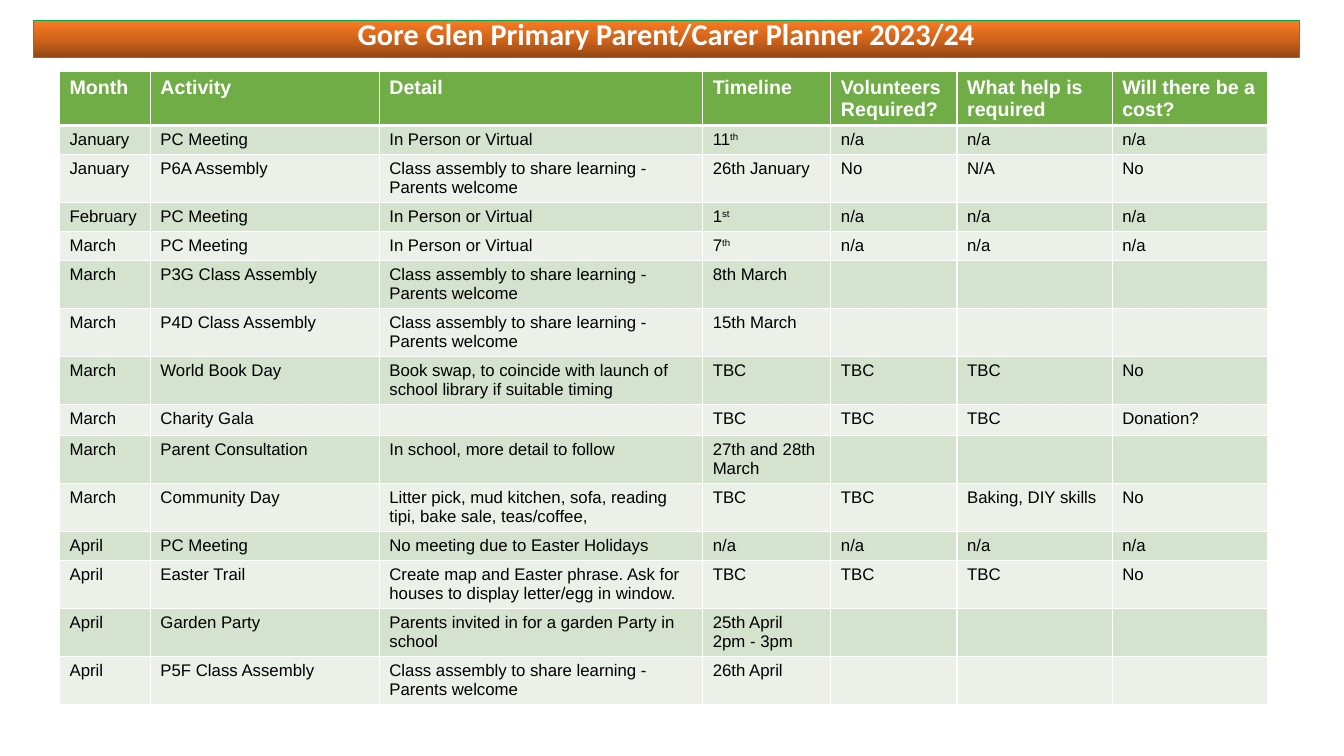
import copy

import lxml.etree
import pptx
import pptx.dml.color
import pptx.enum.text
import pptx.oxml.ns
import pptx.util

Cm = pptx.util.Cm
Pt = pptx.util.Pt

TITLE = "Gore Glen Primary Parent/Carer Planner 2023/24"
COLUMN_WIDTHS = [2.29, 5.77, 8.15, 3.23, 3.18, 3.91, 3.91]
HEADER_HEIGHT, SINGLE_HEIGHT, DOUBLE_HEIGHT = 1.36, 0.73, 1.21
HEADER_FILL = "70AD47"
BAND_FILLS = ["EBF1E8", "D4E2CE"]
TITLE_GRADIENT = [(0, "914613"), (0.5, "D1651C"), (1, "FB7A22")]

HEADINGS = ["Month", "Activity", "Detail", "Timeline", "Volunteers Required?",
            "What help is required", "Will there be a cost?"]
MEETING = "In Person or Virtual"
ASSEMBLY = "Class assembly to share learning - Parents welcome"
NOT_NEEDED = ["n/a"] * 3
UNDECIDED = ["TBC"] * 3
BLANK = [""] * 3
EVENTS = [
    (SINGLE_HEIGHT, ["January", "PC Meeting", MEETING, "11^th", *NOT_NEEDED]),
    (DOUBLE_HEIGHT, ["January", "P6A Assembly", ASSEMBLY, "26th January", "No", "N/A", "No"]),
    (SINGLE_HEIGHT, ["February", "PC Meeting", MEETING, "1^st", *NOT_NEEDED]),
    (SINGLE_HEIGHT, ["March", "PC Meeting", MEETING, "7^th", *NOT_NEEDED]),
    (DOUBLE_HEIGHT, ["March", "P3G Class Assembly", ASSEMBLY, "8th March", *BLANK]),
    (DOUBLE_HEIGHT, ["March", "P4D Class Assembly", ASSEMBLY, "15th March", *BLANK]),
    (DOUBLE_HEIGHT, ["March", "World Book Day",
                     "Book swap, to coincide with launch of school library if suitable timing",
                     *UNDECIDED, "No"]),
    (SINGLE_HEIGHT, ["March", "Charity Gala", "", *UNDECIDED, "Donation?"]),
    (DOUBLE_HEIGHT, ["March", "Parent Consultation", "In school, more detail to follow",
                     "27th and 28th March", *BLANK]),
    (DOUBLE_HEIGHT, ["March", "Community Day",
                     "Litter pick, mud kitchen, sofa, reading tipi, bake sale, teas/coffee,",
                     "TBC", "TBC", "Baking, DIY skills", "No"]),
    (SINGLE_HEIGHT, ["April", "PC Meeting", "No meeting due to Easter Holidays",
                     "n/a", *NOT_NEEDED]),
    (DOUBLE_HEIGHT, ["April", "Easter Trail",
                     "Create map and Easter phrase. Ask for houses to display letter/egg in window.",
                     *UNDECIDED, "No"]),
    (DOUBLE_HEIGHT, ["April", "Garden Party", "Parents invited in for a garden Party in school",
                     "25th April\n2pm - 3pm", *BLANK]),
    (DOUBLE_HEIGHT, ["April", "P5F Class Assembly", ASSEMBLY, "26th April", *BLANK]),
]

TITLE_FONT = {"name": "Calibri", "size": Pt(21.6), "bold": True}
HEADER_FONT = {"name": "Arial", "size": Pt(14), "bold": True}
BODY_FONT = {"name": "Arial", "size": Pt(12), "bold": False}


def colour(value):
    """Turn a hex string into a colour."""
    return pptx.dml.color.RGBColor.from_string(value)


def apply(target, values):
    """Set each named attribute on the target."""
    for name, value in values.items():
        setattr(target, name, value)


def add_span(para, text, font, hex_colour):
    """Add a formatted run to a paragraph."""
    span = para.add_run()
    span.text = text
    apply(span.font, font)
    span.font.color.rgb = colour(hex_colour)
    return span


def fill_gradient(shape, stops, angle):
    """Give a shape a linear gradient through three stops."""
    shape.fill.gradient()
    shape.fill.gradient_angle = angle
    first = shape.fill.gradient_stops[0]._gs
    first.addnext(copy.deepcopy(first))
    for stop, (position, value) in zip(shape.fill.gradient_stops, stops):
        stop.position = position
        stop.color.rgb = colour(value)


def format_title(title):
    """Place the title placeholder as a gradient banner."""
    apply(title, {"left": Cm(0.84), "top": Cm(0.51), "width": Cm(31.9), "height": Cm(0.94)})
    fill_gradient(title, TITLE_GRADIENT, 90)
    title.line.color.rgb = colour("00B050")
    title.line.width = Pt(0.75)
    frame = title.text_frame
    apply(frame, {"word_wrap": True,
                  "auto_size": pptx.enum.text.MSO_AUTO_SIZE.NONE,
                  "vertical_anchor": pptx.enum.text.MSO_ANCHOR.BOTTOM})
    para = frame.paragraphs[0]
    apply(para, {"alignment": pptx.enum.text.PP_ALIGN.CENTER, "line_spacing": 0.9})
    add_span(para, TITLE, TITLE_FONT, "FFFFFF")


def add_borders(cell, top, bottom):
    """Draw white borders around a cell, with widths in points."""
    properties = cell._tc.get_or_add_tcPr()
    for side, width in {"L": 1, "R": 1, "T": top, "B": bottom}.items():
        line = lxml.etree.SubElement(properties, pptx.oxml.ns.qn(f"a:ln{side}"), w=str(Pt(width)))
        solid = lxml.etree.SubElement(line, pptx.oxml.ns.qn("a:solidFill"))
        lxml.etree.SubElement(solid, pptx.oxml.ns.qn("a:srgbClr"), val="FFFFFF")


def write_cell(cell, text, font, hex_colour):
    """Write lines of text, raising whatever follows a caret."""
    frame = cell.text_frame
    for number, line in enumerate(text.split("\n")):
        para = frame.add_paragraph() if number else frame.paragraphs[0]
        base, _, raised = line.partition("^")
        if base:
            add_span(para, base, font, hex_colour)
        else:
            lxml.etree.SubElement(para._p, pptx.oxml.ns.qn("a:endParaRPr"),
                                  sz=str(int(font["size"].pt * 100)))
        if raised:
            span = add_span(para, raised, font, hex_colour)
            span._r.get_or_add_rPr().set("baseline", "30000")


def add_planner(page):
    """Add the table of events under its headings."""
    rows = [(HEADER_HEIGHT, HEADINGS), *EVENTS]
    frame = page.shapes.add_table(len(rows), len(HEADINGS), Cm(1.5), Cm(1.8),
                                  Cm(sum(COLUMN_WIDTHS)), Cm(sum(row[0] for row in rows)))
    table = frame.table
    for column, width in zip(table.columns, COLUMN_WIDTHS):
        column.width = Cm(width)
    for number, (height, texts) in enumerate(rows):
        table.rows[number].height = Cm(height)
        header = number == 0
        for cell, text in zip(table.rows[number].cells, texts):
            add_borders(cell, 3 if number == 1 else 1, 3 if header else 1)
            cell.fill.solid()
            cell.fill.fore_color.rgb = colour(HEADER_FILL if header else BAND_FILLS[number % 2])
            write_cell(cell, text, HEADER_FONT if header else BODY_FONT,
                       "FFFFFF" if header else "000000")


def main():
    """Build the planner slide and save it."""
    deck = pptx.Presentation()
    apply(deck, {"slide_width": Cm(33.87), "slide_height": Cm(19.05)})
    page = deck.slides.add_slide(deck.slide_layouts[5])
    format_title(page.shapes.title)
    add_planner(page)
    deck.save("out.pptx")


if __name__ == "__main__":
    main()
